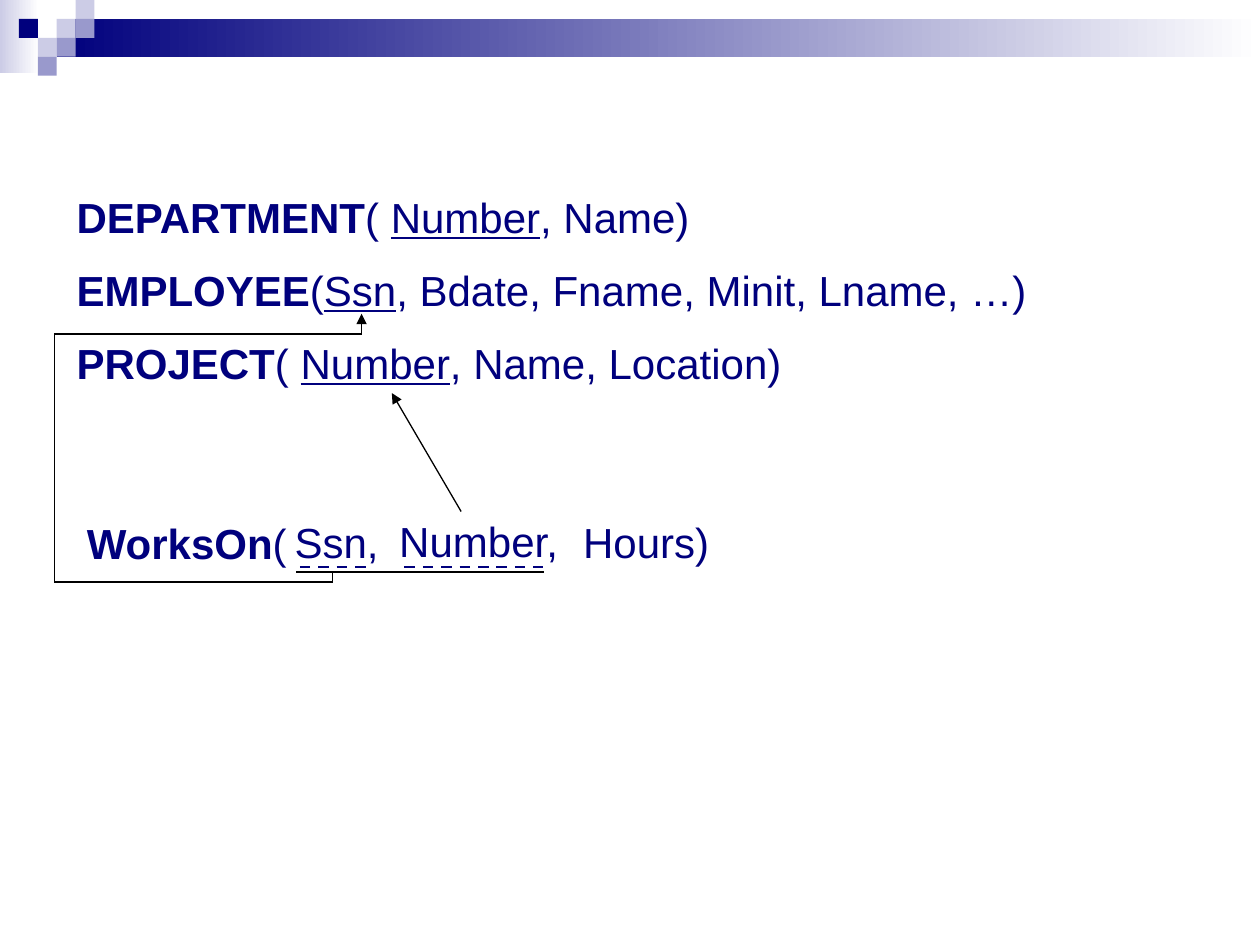
from itertools import pairwise

from lxml import etree
from pptx import Presentation
from pptx.dml.color import RGBColor
from pptx.enum.dml import MSO_LINE
from pptx.enum.shapes import MSO_CONNECTOR, MSO_SHAPE
from pptx.oxml.ns import qn
from pptx.util import Inches, Pt

RECTANGLE = MSO_SHAPE.RECTANGLE
STRAIGHT = MSO_CONNECTOR.STRAIGHT
DASH = MSO_LINE.DASH

COLORS = {"navy": "00007D", "violet": "9999CC", "lavender": "CCCCE6",
          "white": "FFFFFF", "black": "000000"}
FONT = {"name": "Arial", "size": Pt(24)}
PLAIN, BOLD, UNDERLINED = {}, {"bold": True}, {"underline": True}


def color(name):
    return RGBColor.from_string(COLORS[name])


class SlideBuilder:
    def __init__(self, presentation):
        self.slide = presentation.slides.add_slide(presentation.slide_layouts[6])

    def rectangle(self, left, top, width, height, *fill_colors):
        shape = self.slide.shapes.add_shape(
            RECTANGLE, Inches(left), Inches(top), Inches(width), Inches(height))
        shape.shadow.inherit = False
        shape.line.fill.background()
        if len(fill_colors) == 1:
            shape.fill.solid()
            shape.fill.fore_color.rgb = color(fill_colors[0])
            return
        shape.fill.gradient()
        shape.fill.gradient_angle = 0
        for stop, name in zip(shape.fill.gradient_stops, fill_colors):
            stop.color.rgb = color(name)

    def text(self, left, top, width, height, *lines):
        box = self.slide.shapes.add_textbox(
            Inches(left), Inches(top), Inches(width), Inches(height))
        frame = box.text_frame
        frame.word_wrap = True
        for index, runs in enumerate(lines):
            paragraph = frame.add_paragraph() if index else frame.paragraphs[0]
            paragraph.space_before = Pt(13 if index else 0)
            for text, emphasis in runs:
                run = paragraph.add_run()
                run.text = text
                run.font.color.rgb = color("navy")
                for attribute, value in (FONT | emphasis).items():
                    setattr(run.font, attribute, value)

    def line(self, start, end, name="black", width=0.75, dash=None, arrow=False):
        connector = self.slide.shapes.add_connector(
            STRAIGHT, *(Inches(value) for value in (*start, *end)))
        connector.line.color.rgb = color(name)
        connector.line.width = Pt(width)
        if dash:
            connector.line.dash_style = dash
        if arrow:
            outline = connector.line._get_or_add_ln()
            etree.SubElement(outline, qn("a:tailEnd"), type="triangle")
        etree.SubElement(connector._element.spPr, qn("a:effectLst"))

    def route(self, *points):
        for start, end in pairwise(points):
            self.line(start, end, arrow=end == points[-1])


def relation(name, opening, key, rest):
    return [(name, BOLD), (opening, PLAIN), (key, UNDERLINED), (rest, PLAIN)]


def main():
    presentation = Presentation()
    presentation.slide_width = Inches(10)
    presentation.slide_height = Inches(7.5)
    builder = SlideBuilder(presentation)

    builder.rectangle(0, 0, 0.31, 0.58, "lavender", "white")
    builder.rectangle(0.45, 0.15, 9.55, 0.3, "navy", "white")
    tile = 0.15
    for column, row, name in [
        (3, 1, "lavender"), (4, 0, "lavender"), (4, 1, "violet"),
        (2, 2, "lavender"), (1, 1, "navy"), (3, 2, "violet"), (2, 3, "violet"),
    ]:
        builder.rectangle(column * tile, row * tile, tile, tile, name)

    builder.text(
        0.51, 1.47, 9.73, 4.09,
        relation("DEPARTMENT", "( ", "Number", ", Name)"),
        relation("EMPLOYEE", "(", "Ssn", ", Bdate, Fname, Minit, Lname, …)"),
        relation("PROJECT", "( ", "Number", ", Name, Location)"))

    builder.text(0.59, 4.06, 1.89, 0.5, [("WorksOn", BOLD), ("(", PLAIN)])
    for text, left, top, width in [
        ("Hours)", 4.53, 4.05, 1.2), ("Ssn,", 2.24, 4.05, 0.96), ("Number,", 3.07, 4.04, 1.48),
    ]:
        builder.text(left, top, width, 0.5, [(text, PLAIN)])

    for left, right in [(2.38, 2.93), (3.21, 4.31)]:
        builder.line((left, 4.5), (right, 4.5), "navy", 1.5, DASH)
    builder.route((2.64, 4.54), (2.64, 4.62), (0.43, 4.62),
                  (0.43, 2.65), (2.87, 2.65), (2.87, 2.49))
    builder.route((3.66, 4.06), (3.11, 3.12))
    builder.line((2.35, 4.54), (4.32, 4.54), width=1.5)

    presentation.save("out.pptx")


if __name__ == "__main__":
    main()
